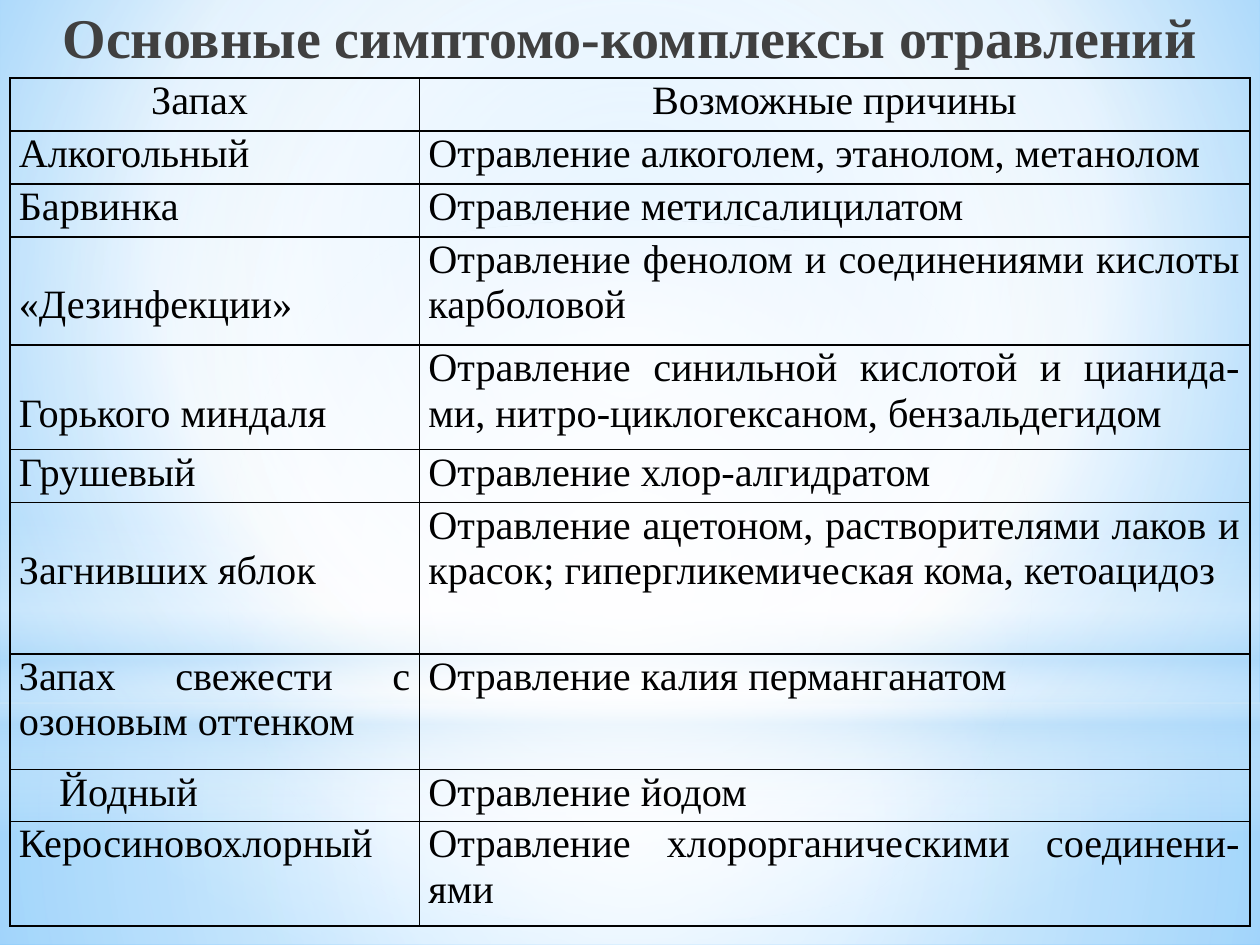
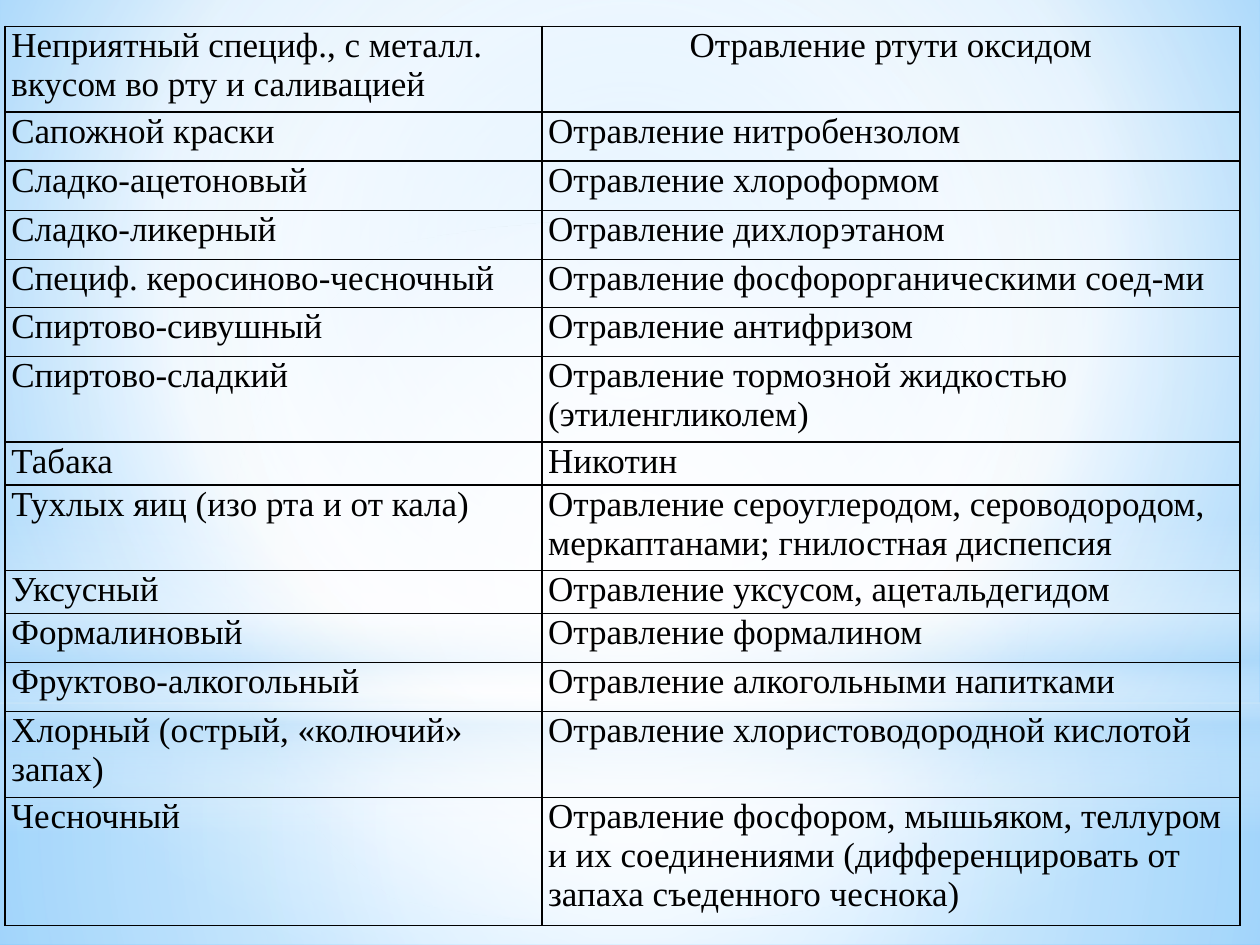
from dataclasses import dataclass
from lxml import etree
from pptx import Presentation
from pptx import util as u
from pptx.dml import color
from pptx.enum import shapes, text
from pptx.oxml import ns


@dataclass(frozen=True)
class Theme:
    font: str = "Times New Roman"
    ink: str = "000000"
    title_grey: str = "404040"
    navy: str = "212745"
    white: str = "FFFFFF"
    haze: str = "B4DCFA"
    sky: str = "9ED5FF"
    blue: str = "5BB9FF"
    title_size: int = 32
    odour_size: int = 23
    more_size: int = 20
    border: float = 1


T = Theme()
COLS, ROWS = 1000, 750
CELL = u.Inches(10) // COLS
CENTRE = (50, 50, 50, 50)


def gradient(props, stops, focus=None):
    grad = etree.Element(ns.qn("a:gradFill"), rotWithShape="1")
    gs_list = etree.SubElement(grad, ns.qn("a:gsLst"))
    for pos, rgb, alpha in stops:
        gs = etree.SubElement(gs_list, ns.qn("a:gs"), pos=str(pos * 1000))
        clr = etree.SubElement(gs, ns.qn("a:srgbClr"), val=rgb)
        if alpha < 100:
            etree.SubElement(clr, ns.qn("a:alpha"), val=str(alpha * 1000))
    if focus:
        way = etree.SubElement(grad, ns.qn("a:path"), path="circle")
        sides = {side: str(v * 1000) for side, v in zip("ltrb", focus)}
        etree.SubElement(way, ns.qn("a:fillToRect"), **sides)
    else:
        etree.SubElement(grad, ns.qn("a:lin"), ang="5400000", scaled="0")
    props.replace(props.find(ns.qn("a:solidFill")), grad)


def add_run(p, words, size, rgb, bold=False):
    r = p.add_run()
    r.text = words
    r.font.name = T.font
    r.font.size = u.Pt(size)
    r.font.bold = bold
    r.font.fill.solid()
    r.font.fill.fore_color.rgb = color.RGBColor.from_string(rgb)
    return r


RECT, OVAL = shapes.MSO_SHAPE.RECTANGLE, shapes.MSO_SHAPE.OVAL
LEFT, MID, JUST = text.PP_ALIGN.LEFT, text.PP_ALIGN.CENTER, text.PP_ALIGN.JUSTIFY

layers = [
    (RECT, 558, 192, [(0, T.white, 91), (37, T.white, 76), (100, T.haze, 79)], CENTRE),
    (RECT, 0, 558, [(0, T.white, 89), (48, T.white, 62), (100, T.haze, 79)], CENTRE),
    (RECT, 412, 250, [(0, T.white, 0), (29, T.white, 30), (45, T.haze, 40),
                      (55, T.white, 26), (65, T.haze, 60), (100, T.white, 0)], None),
    (OVAL, 175, 558, [(0, T.white, 100), (56, T.white, 0)], CENTRE),
]

odours = [
    (42, "Запах", "Возможные причины"),
    (42, "Алкогольный", "Отравление алкоголем, этанолом, метанолом"),
    (42, "Барвинка", "Отравление метилсалицилатом"),
    (86, "«Дезинфекции»", "Отравление фенолом и соединениями кислоты карболовой"),
    (83, "Горького миндаля",
     "Отравление синильной кислотой и цианида-ми, нитро-циклогексаном, бензальдегидом"),
    (42, "Грушевый", "Отравление хлор-алгидратом"),
    (120, "Загнивших яблок",
     "Отравление ацетоном, растворителями лаков и красок; гипергликемическая кома, кетоацидоз"),
    (92, "Запах свежести с озоновым оттенком", "Отравление калия перманганатом"),
    (41, "Йодный", "Отравление йодом"),
    (83, "Керосиновохлорный", "Отравление хлорорганическими соединени-ями"),
]

more_odours = [
    (68, "Неприятный специф., с металл. вкусом во рту и саливацией", "Отравление ртути оксидом"),
    (39, "Сапожной краски", "Отравление нитробензолом"),
    (39, "Сладко-ацетоновый", "Отравление хлороформом"),
    (39, "Сладко-ликерный", "Отравление дихлорэтаном"),
    (38, "Специф. керосиново-чесночный", "Отравление фосфорорганическими соед-ми"),
    (39, "Спиртово-сивушный", "Отравление антифризом"),
    (68, "Спиртово-сладкий", "Отравление тормозной жидкостью (этиленгликолем)"),
    (34, "Табака", "Никотин"),
    (68, "Тухлых яиц (изо рта и от кала)",
     "Отравление сероуглеродом, сероводородом, меркаптанами; гнилостная диспепсия"),
    (34, "Уксусный", "Отравление уксусом, ацетальдегидом"),
    (39, "Формалиновый", "Отравление формалином"),
    (39, "Фруктово-алкогольный", "Отравление алкогольными напитками"),
    (68, "Хлорный (острый, «колючий» запах)", "Отравление хлористоводородной кислотой"),
    (102, "Чесночный",
     "Отравление фосфором, мышьяком, теллуром и их соединениями "
     "(дифференцировать от запаха съеденного чеснока)"),
]

LOWERED = ("«Дезинфекции»", "Горького миндаля", "Загнивших яблок")
pages = [
    dict(title="Основные симптомо-комплексы отравлений", rows=odours, at=(8, 62),
         widths=(325, 659), inset=7, size=T.odour_size, align=JUST, leading=u.Pt(26),
         centred=("Запах", "Возможные причины")),
    dict(title=None, rows=more_odours, at=(4, 21), widths=(426, 554), inset=5,
         size=T.more_size, align=LEFT, leading=None, centred=("Отравление ртути оксидом",)),
]

prs = Presentation()
prs.slide_width, prs.slide_height = COLS * CELL, ROWS * CELL
master = prs.slide_master
master.background.fill.solid()
gradient(master.element.find(".//" + ns.qn("p:bgPr")),
         [(0, T.sky, 100), (60, T.white, 100), (100, T.blue, 100)], (20, 10, 20, 60))

for page in pages:
    s = prs.slides.add_slide(prs.slide_layouts[6])

    for kind, top, height, stops, focus in layers:
        sp = s.shapes.add_shape(kind, 0, top * CELL, COLS * CELL, height * CELL)
        sp.shadow.inherit = False
        sp.line.fill.background()
        sp.fill.solid()
        gradient(sp.element.spPr, stops, focus)

    if page["title"]:
        sp = s.shapes.add_textbox(0, -8 * CELL, COLS * CELL, 47 * CELL)
        tf = sp.text_frame
        tf.word_wrap = True
        tf.margin_top, tf.margin_bottom = 10 * CELL, 0
        p = tf.paragraphs[0]
        p.alignment = MID
        r = add_run(p, page["title"], T.title_size, T.title_grey, bold=True)
        gradient(r.font._element, [(0, T.ink, 100), (40, T.title_grey, 100), (100, T.navy, 65)])

    rows, widths = page["rows"], page["widths"]
    left, top = page["at"]
    tbl = s.shapes.add_table(len(rows), 2, left * CELL, top * CELL, sum(widths) * CELL,
                             sum(row[0] for row in rows) * CELL).table
    tbl.first_row = tbl.horz_banding = False
    for col, width in zip(tbl.columns, widths):
        col.width = width * CELL

    for i, (height, *entries) in enumerate(rows):
        tbl.rows[i].height = height * CELL
        for j, words in enumerate(entries):
            cell = tbl.cell(i, j)
            cell.margin_left = cell.margin_right = page["inset"] * CELL
            cell.margin_top = cell.margin_bottom = 0
            if words in LOWERED:
                cell.margin_top = page["leading"]
            if words == "Запах":
                cell.margin_right += 24 * CELL
            if words == "Йодный":
                cell.margin_left += 32 * CELL
            p = cell.text_frame.paragraphs[0]
            p.alignment = MID if words in page["centred"] else page["align"]
            p.line_spacing = page["leading"]
            add_run(p, words, page["size"], T.ink)

            tc_pr = cell._tc.get_or_add_tcPr()
            for side in ("lnL", "lnR", "lnT", "lnB"):
                ln = etree.SubElement(tc_pr, ns.qn("a:" + side), w=str(u.Pt(T.border)))
                fill = etree.SubElement(ln, ns.qn("a:solidFill"))
                etree.SubElement(fill, ns.qn("a:srgbClr"), val=T.ink)
            cell.fill.background()

prs.save("out.pptx")
